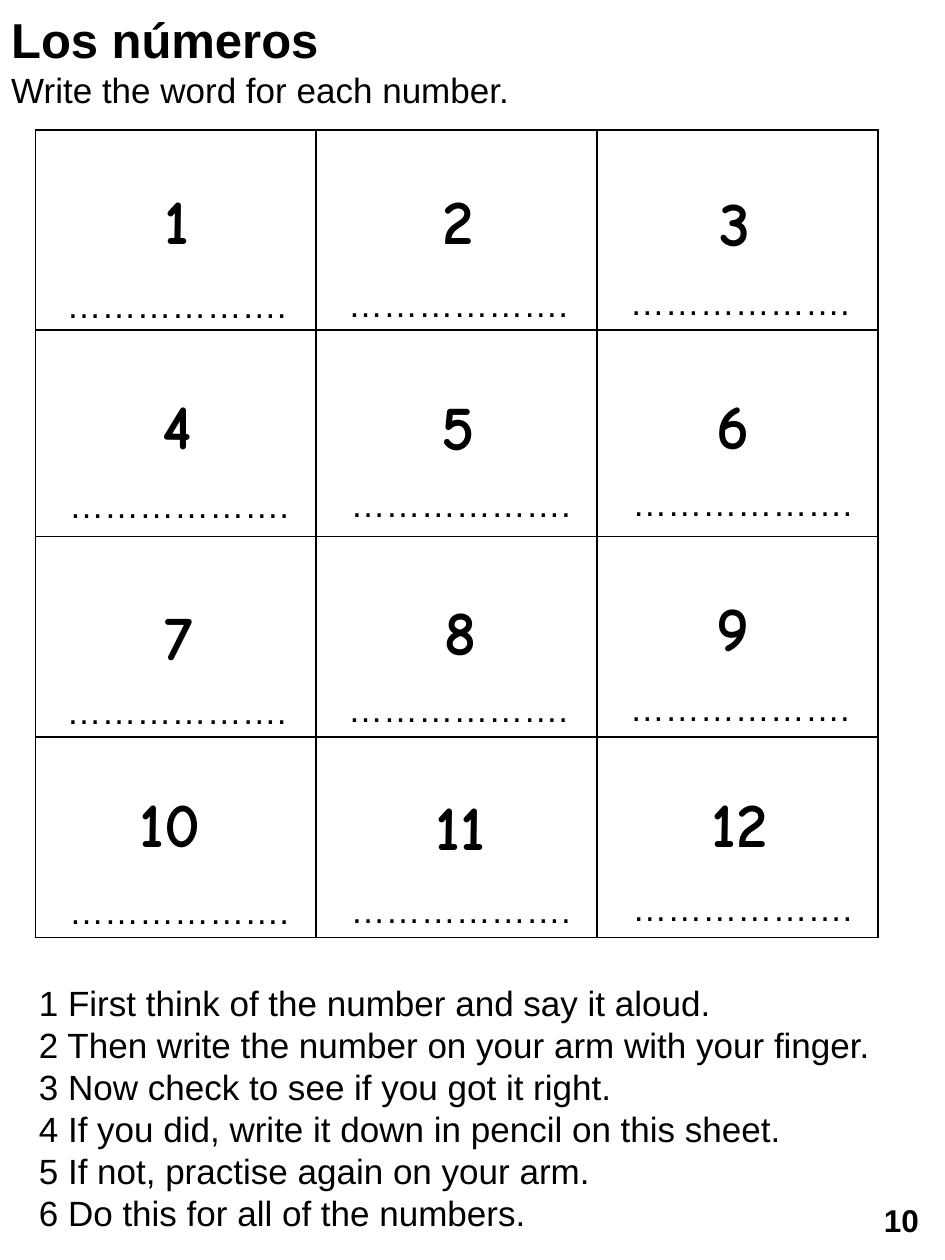
"""Build a worksheet slide for writing the Spanish numbers from one to twelve."""
from lxml import etree
from pptx import Presentation
from pptx.dml.color import RGBColor
from pptx.enum.shapes import MSO_SHAPE
from pptx.enum.text import MSO_ANCHOR, MSO_AUTO_SIZE, PP_ALIGN
from pptx.oxml.ns import qn
from pptx.util import Inches, Pt

CENTER = PP_ALIGN.CENTER
LEFT = PP_ALIGN.LEFT
MIDDLE = MSO_ANCHOR.MIDDLE
GROW = MSO_AUTO_SIZE.SHAPE_TO_FIT_TEXT
ROUNDED = MSO_SHAPE.ROUNDED_RECTANGLE

COLUMN_WIDTHS = [2.23] * 3
ROW_HEIGHTS = [1.59, 1.64, 1.59, 1.59]
NUMBER_PLACES = [
    (0.96, 1.3, 0.89), (3.19, 1.3, 0.89), (5.39, 1.32, 0.89),
    (0.96, 2.93, 0.89), (3.19, 2.94, 0.89), (5.37, 2.93, 0.89),
    (0.97, 4.6, 0.89), (3.21, 4.56, 0.89), (5.37, 4.53, 0.89),
    (0.76, 6.09, 1.18), (3.02, 6.11, 1.27), (5.26, 6.09, 1.22),
]
ANSWER_TOPS = [2.2, 3.79, 5.42, 7.01]
STEPS = [
    "1 First think of the number and say it aloud.",
    "2 Then write the number on your arm with your finger.",
    "3 Now check to see if you got it right.",
    "4 If you did, write it down in pencil on this sheet.",
    "5 If not, practise again on your arm.",
    "6 Do this for all of the numbers.",
]


def color(value):
    return RGBColor.from_string(value)


def line_element(tag, value, width):
    line = etree.Element(qn(tag), w=str(Pt(width)))
    fill = etree.SubElement(line, qn("a:solidFill"))
    etree.SubElement(fill, qn("a:srgbClr"), val=value)
    return line


class Worksheet:
    ink = "000000"
    body_font = "Arial"
    number_font = "Comic Neue"

    def __init__(self, slide):
        self.slide = slide

    def style(self, span, size, bold=False, font=None):
        span.font.name = font or self.body_font
        span.font.size = Pt(size)
        span.font.bold = bold
        span.font.color.rgb = color(self.ink)

    def text(self, left, top, width, height, text, size=20, bold=False,
             font=None, align=LEFT):
        box = self.slide.shapes.add_textbox(
            Inches(left), Inches(top), Inches(width), Inches(height))
        frame = box.text_frame
        frame.word_wrap = True
        frame.auto_size = GROW
        para = frame.paragraphs[0]
        para.text = text
        para.alignment = align
        for span in para.runs:
            self.style(span, size, bold, font)
        return para

    def number(self, left, top, width, text):
        para = self.text(left, top, width, 0.85, text, 36, True,
                         self.number_font, CENTER)
        para.line_spacing = 1.15
        properties = para.runs[0].font._element
        properties.insert(0, line_element("a:ln", self.ink, 0.5))

    def grid(self, left, top, widths, heights):
        table = self.slide.shapes.add_table(
            len(heights), len(widths), Inches(left), Inches(top),
            Inches(sum(widths)), Inches(sum(heights))).table
        table.first_row = False
        table.horz_banding = False
        for column, width in zip(table.columns, widths):
            column.width = Inches(width)
        for row, height in zip(table.rows, heights):
            row.height = Inches(height)
        for cell in table.iter_cells():
            cell.fill.background()
            properties = cell._tc.get_or_add_tcPr()
            for index, side in enumerate("LRTB"):
                properties.insert(index, line_element(f"a:ln{side}", self.ink, 1))

    def page_number(self, left, top, width, height, text):
        badge = self.slide.shapes.add_shape(
            ROUNDED, Inches(left), Inches(top), Inches(width), Inches(height))
        badge.shadow.inherit = False
        badge.fill.background()
        badge.line.fill.background()
        badge.text_frame.text = text
        badge.text_frame.vertical_anchor = MIDDLE
        para = badge.text_frame.paragraphs[0]
        para.alignment = CENTER
        self.style(para.runs[0], 18, True)


def main():
    deck = Presentation()
    deck.slide_width = Inches(7.5)
    deck.slide_height = Inches(10)
    sheet = Worksheet(deck.slides.add_slide(deck.slide_layouts[6]))

    sheet.grid(0.28, 1.03, COLUMN_WIDTHS, ROW_HEIGHTS)
    for value, (left, top, width) in enumerate(NUMBER_PLACES, start=1):
        sheet.number(left, top, width, str(value))

    heading = sheet.text(-0.01, 0.03, 7.42, 0.91,
                         "Los números\vWrite the word for each number.")
    sheet.style(heading.runs[0], 28, True)

    for row, top in enumerate(ANSWER_TOPS):
        for column in range(len(COLUMN_WIDTHS)):
            left = 0.43 + 2.235 * column + 0.02 * (row % 2)
            sheet.text(left, top - 0.01 * column, 1.98, 0.44, "……………….")

    sheet.text(0.21, 7.74, 7.01, 2.12, "\v".join(STEPS))
    sheet.page_number(6.88, 9.45, 0.55, 0.47, "10")
    deck.save("out.pptx")


if __name__ == "__main__":
    main()
